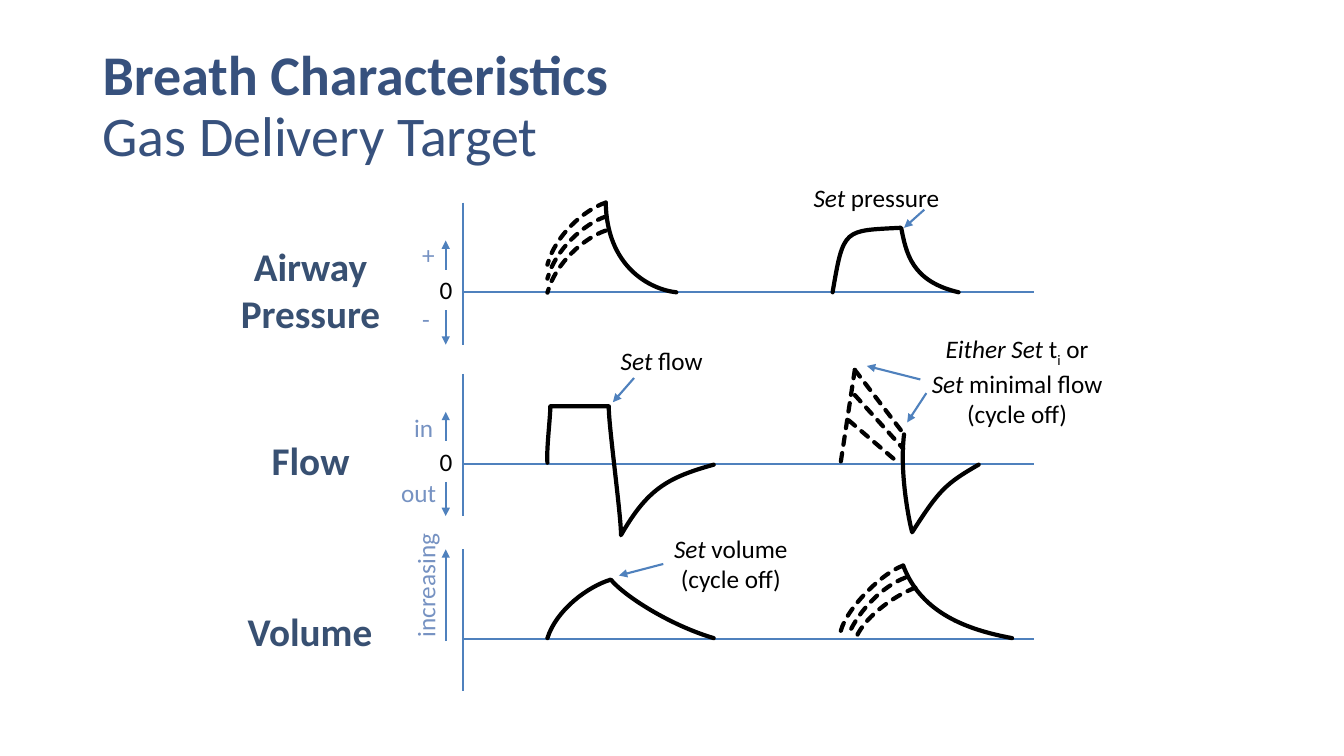
from dataclasses import dataclass

from lxml import etree
from pptx import Presentation
from pptx import util as u
from pptx.dml.color import RGBColor
from pptx.enum import dml, shapes, text
from pptx.oxml.ns import qn

Point = tuple[float, float]

TITLE_BLUE = RGBColor(0x37, 0x51, 0x7D)
ROW_BLUE = RGBColor(0x38, 0x50, 0x72)
SCALE_BLUE = RGBColor(0x76, 0x92, 0xC2)
AXIS_BLUE = RGBColor(0x4F, 0x81, 0xBD)
BLACK = RGBColor(0, 0, 0)

CENTER = text.PP_ALIGN.CENTER
LEFT = text.PP_ALIGN.LEFT
AXIS_LEFT, AXIS_RIGHT, SCALE_X = 330.5, 738.7, 318.4
PRESSURE_ZERO, FLOW_ZERO, VOLUME_ZERO = 208.8, 331.2, 456.5
VOLUME_TILT = 352.6


@dataclass
class Words:
    text: str
    italic: bool = False
    baseline: int = 0


@dataclass
class Label:
    lines: list[list[Words]]
    left: float
    top: float
    width: float
    height: float = 28.8
    color: RGBColor = BLACK
    size: float = 18
    bold: bool = False
    align: text.PP_ALIGN = CENTER
    rotation: float = 0


@dataclass
class Trace:
    start: Point
    segments: list[list[Point]]
    dashed: bool = False
    rotation: float = 0


@dataclass
class Rule:
    start: Point
    end: Point
    arrow: bool = False
    color: RGBColor = AXIS_BLUE
    width: float = 1.5
    dashed: bool = False


def apply_format(target, values: dict) -> None:
    for name, value in values.items():
        setattr(target, name, value)


def style_line(line, color: RGBColor, width: float, dashed: bool) -> None:
    line.color.rgb = color
    line.width = u.Pt(width)
    if dashed:
        line.dash_style = dml.MSO_LINE.SQUARE_DOT


def add_words(paragraph, words: Words, color: RGBColor, size: float, bold: bool) -> None:
    run = paragraph.add_run()
    run.text = words.text
    apply_format(run.font, {"name": "Calibri", "size": u.Pt(size),
                            "bold": bold, "italic": words.italic})
    run.font.color.rgb = color
    if words.baseline:
        run._r.get_or_add_rPr().set("baseline", str(words.baseline))


def draw_label(slide, label: Label):
    box = slide.shapes.add_textbox(*map(u.Pt, (label.left, label.top, label.width, label.height)))
    box.rotation = label.rotation
    frame = box.text_frame
    apply_format(frame, {"word_wrap": False, "auto_size": text.MSO_AUTO_SIZE.SHAPE_TO_FIT_TEXT})
    for index, line in enumerate(label.lines):
        paragraph = frame.add_paragraph() if index else frame.paragraphs[0]
        paragraph.alignment = label.align
        for words in line:
            add_words(paragraph, words, label.color, label.size, label.bold)
    return box


def draw_rule(slide, rule: Rule):
    line = slide.shapes.add_connector(
        shapes.MSO_CONNECTOR.STRAIGHT, *map(u.Pt, (*rule.start, *rule.end)))
    style_line(line.line, rule.color, rule.width, rule.dashed)
    if rule.dashed:
        line.line._get_or_add_ln().set("cap", "rnd")
    if rule.arrow:
        etree.SubElement(line.line._get_or_add_ln(), qn("a:tailEnd"), type="triangle")
    etree.SubElement(line._element.spPr, qn("a:effectLst"))
    return line


def bend_segments(wave, segments: list[list[Point]]) -> None:
    straight_parts = list(wave._element.iter(qn("a:lnTo")))
    for part, segment in zip(straight_parts, segments):
        if len(segment) == 3:
            curve = etree.Element(qn("a:cubicBezTo"))
            for x, y in segment:
                etree.SubElement(curve, qn("a:pt"), x=str(u.Pt(x) - wave.left),
                                 y=str(u.Pt(y) - wave.top))
            part.getparent().replace(part, curve)


def draw_trace(slide, trace: Trace) -> None:
    builder = slide.shapes.build_freeform(*map(u.Pt, trace.start))
    builder.add_line_segments([tuple(map(u.Pt, segment[-1])) for segment in trace.segments],
                              close=False)
    wave = builder.convert_to_shape()
    bend_segments(wave, trace.segments)
    wave.rotation = trace.rotation
    wave.shadow.inherit = False
    wave.fill.background()
    style_line(wave.line, BLACK, 3, trace.dashed)
    wave.line._get_or_add_ln().set("cap", "rnd")


def draw_title(slide) -> None:
    title = slide.shapes.add_textbox(*map(u.Pt, (66.2, 28.8, 828, 95)))
    apply_format(title.text_frame, {"word_wrap": True, "vertical_anchor": text.MSO_ANCHOR.BOTTOM})
    heading = title.text_frame.paragraphs[0]
    heading.line_spacing = 0.9
    add_words(heading, Words("Breath Characteristics"), TITLE_BLUE, 40, True)
    heading.add_line_break()
    add_words(heading, Words("Gas Delivery Target"), TITLE_BLUE, 40, False)


def row_name(names: list[str], left: float, top: float, width: float, height: float = 41) -> Label:
    return Label([[Words(name)] for name in names], left, top, width, height, ROW_BLUE, 28, True)


def scale_name(name: str, left: float, top: float, width: float, rotation: float = 0) -> Label:
    return Label([[Words(name)]], left, top, width, color=SCALE_BLUE, align=LEFT, rotation=rotation)


SET = Words("Set", italic=True)
CYCLE_OFF = [Words("(cycle off)")]

LABELS = [
    row_name(["Airway", "Pressure"], 164.2, 169.2, 115.2, 74.9),
    row_name(["Flow"], 186.5, 308.2, 70.6),
    row_name(["Volume"], 169.2, 430, 104.4),
    *(Label([[Words("0")]], 306.7, zero - 16.2, 23.8) for zero in (PRESSURE_ZERO, FLOW_ZERO)),
    scale_name("+", 294.5, 167.6, 23.8),
    scale_name("-", 294.5, 213.1, 20.2),
    scale_name("in", 288.7, 290.9, 28.1),
    scale_name("out", 279.4, 337.7, 39.6),
    scale_name("increasing", 259.2, 403.2, 89.3, 270),
    Label([[SET, Words(" pressure")]], 573.1, 126.7, 105.8),
    Label([[SET, Words(" flow")]], 435.6, 243.4, 74.2),
]
MINIMAL_FLOW = Label(
    [[Words("Either Set ", True), Words("t"), Words("i", baseline=-25000), Words(" or")],
     [SET, Words(" minimal flow")], CYCLE_OFF], 657.4, 234.7, 138.2, 72.7)
SET_VOLUME = Label([[SET, Words(" volume")], CYCLE_OFF], 473.8, 377.3, 96.5, 51.1)

AXES = [rule for zero in (PRESSURE_ZERO, FLOW_ZERO, VOLUME_ZERO) for rule in (
    Rule((AXIS_LEFT, zero), (AXIS_RIGHT, zero)),
    Rule((AXIS_LEFT, zero - 64.1), (AXIS_LEFT, zero + 37.4)))]
DIRECTIONS = [Rule((SCALE_X, zero + start), (SCALE_X, zero + end), True)
              for zero in (PRESSURE_ZERO, FLOW_ZERO)
              for start, end in ((-16.2, -37), (13, 37.4))]
POINTERS = [
    Rule((SCALE_X, 457.9), (SCALE_X, 392.4), True),
    Rule((452.9, 270), (437.8, 287.3), True),
    Rule((661.7, 280.8), (648, 301.7), True),
    Rule((660.2, 149.8), (645.8, 162.7), True),
]
FLOW_RANGE = [Rule(start, end, False, BLACK, 3, True) for start, end in (
    ((610.6, 264.2), (600.5, 330.5)), ((610.6, 264.2), (645.8, 310.3)),
    ((610.6, 282.2), (645.1, 320.4)), ((606.2, 300.2), (640.8, 329.8)))]

TRACES = [
    Trace((391, 330.5), [[(390.2, 321.1), (393.1, 298.1), (393.1, 290.2)], [(434.9, 290.2)],
                         [(434.2, 300.2), (444.2, 372.2), (443.5, 382.3)],
                         [(462.2, 349.9), (475.9, 341.3), (509.8, 331.9)]]),
    Trace((645.8, 310.3), [[(642.2, 339.1), (650.2, 375.8), (651.6, 380.2)],
                           [(671, 349.9), (675.4, 345.6), (699.1, 331.9)]]),
    Trace((684.7, 208.8), [[(650.9, 200.9), (647.3, 180.7), (643.7, 162.7)],
                           [(602.6, 164.9), (602.6, 162.7), (594.7, 208.8)]]),
    Trace((483.1, 208.8), [[(463.7, 206.6), (433.4, 190.1), (432.7, 144.7)]]),
    *(Trace((432.7, 144.7 + drop), [[(417.6, 149.8 + drop), (396.7, 167.8 + drop),
                                     (391, 189.1 + drop)]], True) for drop in (0, 10, 20)),
    Trace((509.8, 455.8), [[(478.1, 446.4), (445.7, 425.5), (436.3, 414)],
                           [(419.8, 419), (397.4, 435.6), (391, 455.8)]]),
    Trace((722.9, 455.8), [[(691.9, 450), (658.1, 438.5), (645.1, 403.9)]]),
    *(Trace(start, [curve], True, VOLUME_TILT) for start, curve in (
        ((648, 407), [(631.5, 410.7), (604, 432.5), (597.8, 447.5)]),
        ((649, 415.4), [(633.2, 419.1), (614, 433.3), (603.8, 450.1)]),
        ((656.1, 422.7), [(638.8, 427), (615.3, 440), (608.3, 455)]))),
]


def main() -> None:
    deck = Presentation()
    apply_format(deck, {"slide_width": u.Pt(960), "slide_height": u.Pt(540)})
    slide = deck.slides.add_slide(deck.slide_layouts[6])
    draw_title(slide)
    for rule in AXES + DIRECTIONS + FLOW_RANGE + POINTERS:
        draw_rule(slide, rule)
    for trace in TRACES:
        draw_trace(slide, trace)
    for label in LABELS:
        draw_label(slide, label)
    for label, target in ((MINIMAL_FLOW, (619.2, 261.4)), (SET_VOLUME, (442.1, 411.1))):
        callout = draw_label(slide, label)
        pointer = draw_rule(slide, Rule((label.left, label.top + label.height / 2), target, True))
        pointer.begin_connect(callout, 1)
    deck.save("out.pptx")


if __name__ == "__main__":
    main()
